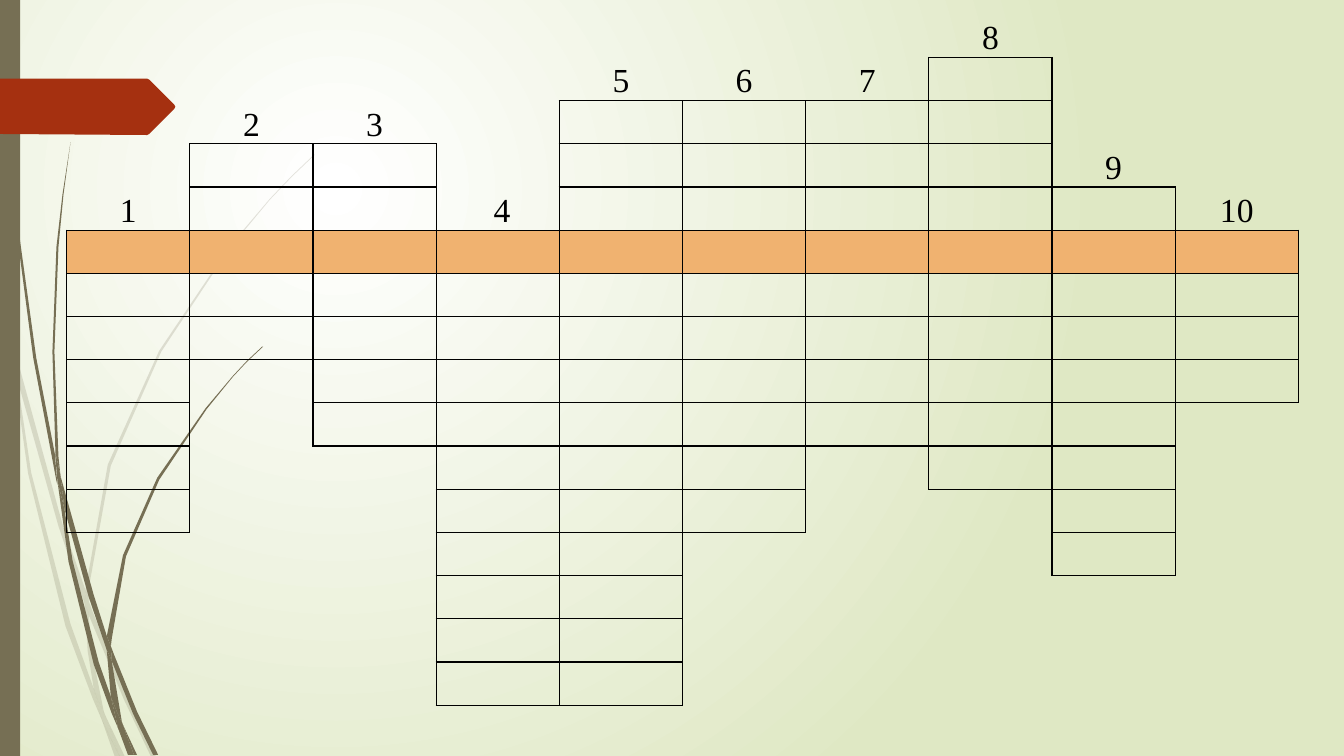
from dataclasses import dataclass

from lxml.etree import SubElement
from pptx import Presentation
from pptx.dml.color import RGBColor as Color
from pptx.enum.shapes import MSO_SHAPE as Preset
from pptx.enum.text import PP_ALIGN as Align
from pptx.oxml.ns import qn
from pptx.util import Cm, Pt


@dataclass(frozen=True)
class Theme:
    """Colours and type sizes of the slide."""
    font: str = "Times New Roman"
    size: Pt = Pt(24)
    line: Pt = Pt(1)
    ink: str = "000000"
    stem: str = "766F54"
    accent: str = "A53010"
    keyword: str = "F0B270"
    glow: str = "FFFFFF"
    meadow: str = "DFE8C4"
    faint: int = 20


THEME = Theme()
UNIT = Cm(2.54) / 100
ROWS, KEYWORD_ROW = 16, 5
WORDS = [("1", 5, 11), ("2", 3, 7), ("3", 3, 9), (" 4", 5, 15), ("5", 2, 15),
         ("6", 2, 11), ("7", 2, 9), ("8", 1, 10), ("9", 4, 12), ("10", 5, 8)]
RIBBON = [(0, 78), (146, 78), (148, 79), (173, 104), (174, 106), (173, 108),
          (148, 133), (146, 134), (0, 133)]
FAINT_STEMS = [
    [(11, 350), (9, 322), (0, 282), (0, 299), (10, 344)],
    [(58, 522), (84, 599), (85, 586), (62, 520), (14, 345), (17, 376)],
    [(92, 607), (88, 596), (88, 610), (123, 694), (150, 751), (155, 751),
     (127, 692)],
    [(119, 751), (124, 751), (105, 711)],
    [(93, 683), (70, 619), (31, 469), (17, 376), (11, 350), (28, 470),
     (65, 621), (92, 693), (101, 714), (99, 707)],
    [(84, 599), (87, 646), (93, 683), (96, 692), (105, 711), (103, 706),
     (91, 646), (88, 610), (88, 608)],
    [(88, 584), (110, 462), (160, 349), (229, 245), (268, 198), (290, 175),
     (312, 154), (312, 153), (289, 175), (268, 197), (228, 244), (158, 348),
     (107, 461), (85, 584), (85, 586), (88, 596)],
    [(101, 714), (114, 751), (119, 751)],
    [(88, 608), (88, 610), (88, 596), (85, 586), (84, 599)],
    [(96, 692), (93, 683), (99, 707), (101, 714), (119, 751), (105, 711)],
]
DARK_STEMS = [
    [(7, 110), (17, 233), (33, 355), (56, 477), (57, 481), (55, 457),
     (55, 453), (36, 355), (19, 232), (8, 109), (5, 48), (4, 0), (3, 0),
     (4, 48)],
    [(88, 592), (106, 645), (106, 631), (93, 590), (60, 472), (64, 505)],
    [(113, 649), (110, 641), (111, 656), (132, 708), (152, 749), (157, 749),
     (136, 706)],
    [(110, 691), (98, 657), (72, 556), (64, 505), (57, 477), (68, 557),
     (93, 659), (111, 708), (117, 722), (116, 717)],
    [(60, 472), (58, 453), (54, 349), (58, 245), (63, 193), (70, 141),
     (62, 193), (56, 245), (52, 349), (55, 449)],
    [(133, 749), (136, 749), (122, 719)],
    [(57, 477), (64, 505), (60, 472), (55, 449), (55, 453)],
    [(111, 633), (125, 552), (158, 476), (205, 406), (231, 374), (245, 359),
     (261, 344), (260, 344), (245, 358), (231, 373), (204, 405), (156, 474),
     (122, 551), (106, 631), (110, 641)],
    [(117, 722), (127, 749), (131, 749)],
    [(106, 645), (110, 691), (116, 706), (122, 719), (121, 716), (111, 656),
     (109, 651)],
    [(106, 645), (109, 651), (111, 656), (110, 641), (106, 631)],
    [(116, 706), (110, 691), (116, 717), (117, 722), (130, 749), (133, 749),
     (122, 719)],
]


def set_format(target, values):
    """Set each attribute in values on the target."""
    for name, value in values.items():
        setattr(target, name, value)


def paint(shape, color, opacity=100):
    """Fill a shape evenly, without line or shadow."""
    shape.shadow.inherit = False
    shape.line.fill.background()
    shape.fill.solid()
    shape.fill.fore_color.rgb = Color.from_string(color)
    if opacity < 100:
        rgb = shape.fill._xPr.find(".//" + qn("a:srgbClr"))
        SubElement(rgb, qn("a:alpha"), val=str(opacity * 1000))


def draw_outline(shapes, points, left, top, color, opacity=100):
    """Draw one closed outline from the given corner."""
    builder = shapes.build_freeform(*points[0], scale=UNIT)
    builder.add_line_segments(points[1:], close=True)
    paint(builder.convert_to_shape(left, top), color, opacity)


def draw_background(slide):
    """Lay a round glow over the slide background."""
    fill = slide.background.fill
    fill.gradient()
    for stop, position, color in zip(fill.gradient_stops, (0, 1),
                                     (THEME.glow, THEME.meadow)):
        stop.position = position
        stop.color.rgb = Color.from_string(color)
    gradient = slide.element.find(".//" + qn("a:gradFill"))
    gradient.remove(gradient.find(qn("a:lin")))
    circle = SubElement(gradient, qn("a:path"))
    circle.set("path", "circle")
    SubElement(circle, qn("a:fillToRect"), l="50000", t="50000",
               r="100000", b="100000")


def draw_decoration(slide, left, top, width, height):
    """Draw the stems, side bar and ribbon along the left edge."""
    for stems, opacity in ((FAINT_STEMS, THEME.faint), (DARK_STEMS, 100)):
        group = slide.shapes.add_group_shape()
        for points in stems:
            draw_outline(group.shapes, points, left, top, THEME.stem, opacity)
    bar = slide.shapes.add_shape(Preset.RECTANGLE, left, top, width, height)
    paint(bar, THEME.stem)
    draw_outline(slide.shapes, RIBBON, left, top, THEME.accent)


def in_word(row, column):
    """Tell whether a grid position holds a letter box."""
    if not 0 <= column < len(WORDS):
        return False
    _, first, last = WORDS[column]
    return first <= row <= last


def set_borders(cell, row, column):
    """Draw the edges that touch a letter box and hide the others."""
    sides = {"L": (0, -1), "R": (0, 1), "T": (-1, 0), "B": (1, 0)}
    properties = cell._tc.get_or_add_tcPr()
    for side, (down, across) in sides.items():
        edge = SubElement(properties, qn("a:ln" + side), w=str(THEME.line))
        if in_word(row, column) or in_word(row + down, column + across):
            solid = SubElement(edge, qn("a:solidFill"))
            SubElement(solid, qn("a:srgbClr"), val=THEME.ink)
        else:
            SubElement(edge, qn("a:noFill"))


def write_number(cell, number):
    """Write a word's number above its first box."""
    paragraph = cell.text_frame.paragraphs[0]
    set_format(paragraph, {"alignment": Align.CENTER, "line_spacing": 1.15,
                           "space_after": Pt(10)})
    run = paragraph.add_run()
    run.text = number
    set_format(run.font, {"name": THEME.font, "size": THEME.size})
    run.font.color.rgb = Color.from_string(THEME.ink)


def draw_crossword(slide, left, top, width, height):
    """Build the crossword table in its box."""
    frame = slide.shapes.add_table(ROWS, len(WORDS), left, top, width, height)
    table = frame.table
    set_format(table, {"first_row": False, "horz_banding": False})
    for column, (number, first, _) in enumerate(WORDS):
        for row in range(ROWS):
            cell = table.cell(row, column)
            set_format(cell, {"margin_left": Cm(0.18), "margin_right": Cm(0.18),
                              "margin_top": 0, "margin_bottom": 0})
            set_borders(cell, row, column)
            if row == KEYWORD_ROW:
                cell.fill.solid()
                cell.fill.fore_color.rgb = Color.from_string(THEME.keyword)
            else:
                cell.fill.background()
            if row == first - 1:
                write_number(cell, number)


def main():
    """Build and save the crossword slide."""
    presentation = Presentation()
    set_format(presentation, {"slide_width": Cm(33.87),
                              "slide_height": Cm(19.05)})
    slide = presentation.slides.add_slide(presentation.slide_layouts[6])
    draw_background(slide)
    draw_decoration(slide, Cm(0), Cm(0), Cm(0.51), presentation.slide_height)
    draw_crossword(slide, Cm(1.68), Cm(0.36), Cm(31.04), Cm(17.42))
    presentation.save("out.pptx")


if __name__ == "__main__":
    main()
